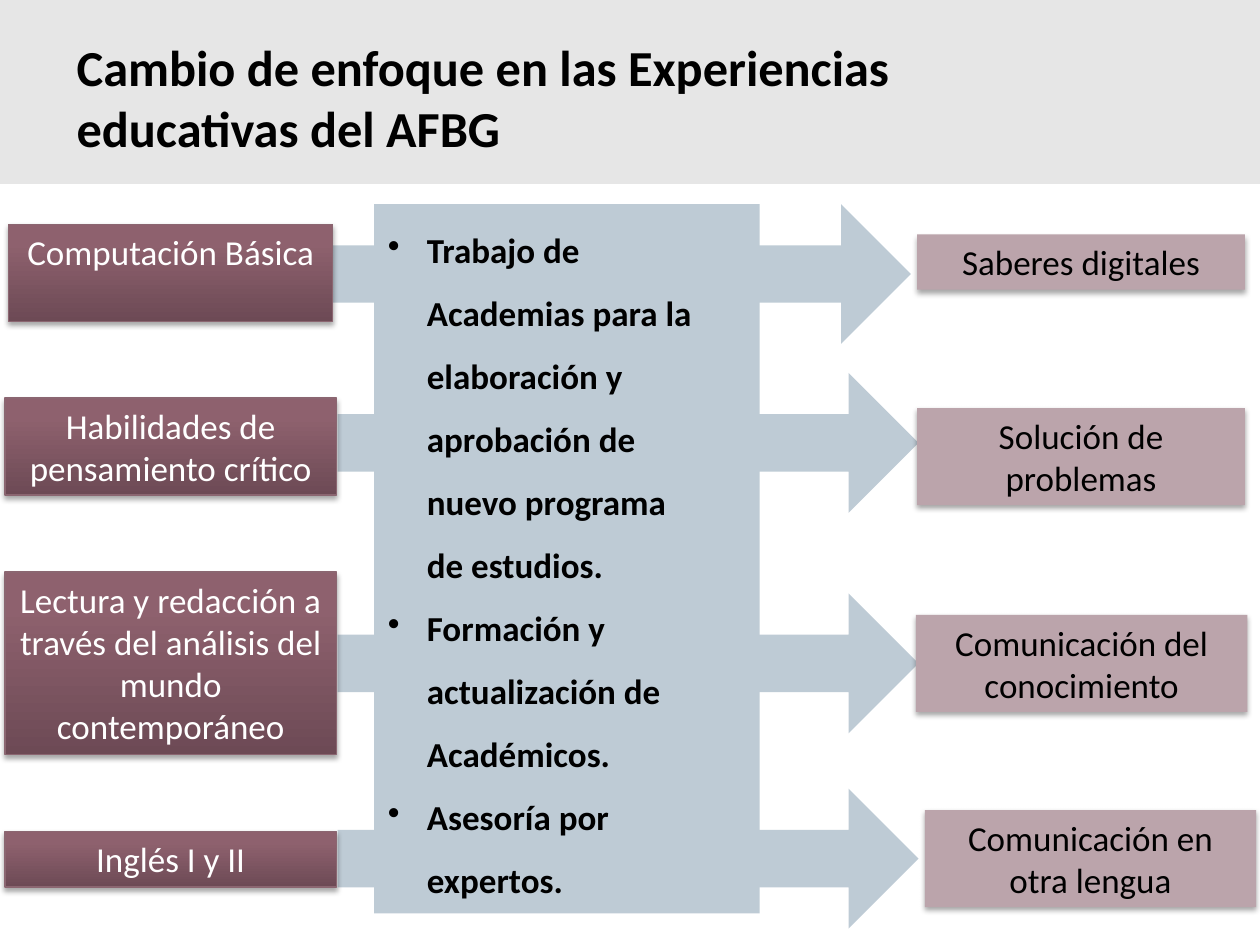
from typing import NamedTuple

from lxml import etree
from pptx import Presentation
from pptx.dml.color import RGBColor
from pptx.enum.shapes import MSO_SHAPE
from pptx.enum.text import MSO_ANCHOR, PP_ALIGN
from pptx.oxml import parse_xml
from pptx.oxml.ns import nsdecls, qn
from pptx.util import Inches, Pt

RECT, ARROW = MSO_SHAPE.RECTANGLE, MSO_SHAPE.RIGHT_ARROW
LEFT, CENTER = PP_ALIGN.LEFT, PP_ALIGN.CENTER
TOP, MIDDLE = MSO_ANCHOR.TOP, MSO_ANCHOR.MIDDLE

BLACK = RGBColor(0x00, 0x00, 0x00)
WHITE = RGBColor(0xFF, 0xFF, 0xFF)
GREY = RGBColor(0xE6, 0xE6, 0xE6)
BLUE = RGBColor(0xBE, 0xCB, 0xD5)
ROSE = RGBColor(0xBB, 0xA4, 0xAB)
EDGE = RGBColor(0x8B, 0x66, 0x71)
WINE = ((0, RGBColor(0x6D, 0x4A, 0x55)),
        (80, RGBColor(0x8E, 0x61, 0x6E)),
        (100, RGBColor(0x8F, 0x60, 0x6F)))

FONT = "Calibri"
CELL = Inches(0.1)  # the slide is a grid of 100 columns by 75 rows
COLS, ROWS = 100, 75
ARROW_H = 11.1


class Area(NamedTuple):
    col: float
    row: float
    wide: float
    high: float

    def emu(self) -> list[int]:
        return [round(n * CELL) for n in self]


class Change(NamedTuple):
    old: str
    old_at: Area
    new: str
    new_at: Area
    arrow: Area


CHANGES = [
    Change("Computación Básica", Area(0.7, 17.8, 25.7, 7.7),
           "Saberes digitales", Area(72.8, 18.6, 26, 4.4),
           Area(20.1, 16.2, 52.2, ARROW_H)),
    Change("Habilidades de pensamiento crítico", Area(0.4, 31.6, 26.3, 7.7),
           "Solución de problemas", Area(72.8, 32.4, 26, 7.7),
           Area(26.8, 29.6, 46.1, ARROW_H)),
    Change("Lectura y redacción a través del análisis del mundo contemporáneo",
           Area(0.4, 45.4, 26.3, 14.5),
           "Comunicación del conocimiento", Area(72.7, 48.8, 26.3, 7.7),
           Area(26.8, 47.1, 46.1, ARROW_H)),
    Change("Inglés I y II", Area(0.4, 66, 26.3, 4.4),
           "Comunicación en otra lengua", Area(73.4, 64.3, 26.3, 7.7),
           Area(26.8, 62.6, 46.1, ARROW_H)),
]
TASKS = [
    "Trabajo de Academias para la elaboración y aprobación de nuevo programa de estudios.",
    "Formación y actualización de Académicos.",
    "Asesoría por expertos.",
]


def write(shape, *lines: str, size: float = 20, color: RGBColor = BLACK,
          bold: bool = False, align=LEFT, anchor=TOP,
          space: float = 1, bullet: str = "") -> None:
    frame = shape.text_frame
    frame.word_wrap = True
    frame.vertical_anchor = anchor
    for i, line in enumerate(lines):
        para = frame.add_paragraph() if i else frame.paragraphs[0]
        para.alignment, para.line_spacing = align, space
        if bullet:
            props = para._p.get_or_add_pPr()
            props.set("marL", str(Inches(0.31)))
            props.set("indent", str(-Inches(0.31)))
            etree.SubElement(props, qn("a:buChar")).set("char", bullet)
        run = para.add_run()
        run.text = line
        font = run.font
        font.name, font.size, font.bold = FONT, Pt(size), bold
        font.color.rgb = color


def block(slide, area: Area, fill: RGBColor | None, kind=RECT):
    shape = slide.shapes.add_shape(kind, *area.emu())
    if fill is not None:
        shape.fill.solid()
        shape.fill.fore_color.rgb = fill
    shape.line.fill.background()
    shape.shadow.inherit = False
    return shape


def shade(shape) -> None:
    """Fill with the wine gradient, dark at the foot, and outline."""
    stops = "".join(
        f'<a:gs pos="{pos * 1000}"><a:srgbClr val="{color}"/></a:gs>'
        for pos, color in WINE)
    grad = parse_xml(
        f'<a:gradFill {nsdecls("a")} rotWithShape="1"><a:gsLst>{stops}</a:gsLst>'
        '<a:lin ang="16200000" scaled="0"/></a:gradFill>')
    shape._element.spPr.find(qn("a:prstGeom")).addnext(grad)
    shape.line.color.rgb = EDGE
    shape.line.width = Pt(0.75)


def label(slide, area: Area, text: str, fill: RGBColor | None,
          color: RGBColor) -> None:
    shape = block(slide, area, fill)
    if fill is None:
        shade(shape)
    shape._element.spPr.find(qn("a:effectLst")).append(parse_xml(
        f'<a:outerShdw {nsdecls("a")} blurRad="{Pt(3.1)}" dist="{Pt(1.8)}" '
        'dir="5400000" rotWithShape="0"><a:srgbClr val="000000">'
        '<a:alpha val="35000"/></a:srgbClr></a:outerShdw>'))
    write(shape, text, color=color, align=CENTER)


def main() -> None:
    deck = Presentation()
    deck.slide_width, deck.slide_height = COLS * CELL, ROWS * CELL
    slide = deck.slides.add_slide(deck.slide_layouts[6])

    # Header band and title
    block(slide, Area(0, 0, COLS, 14.6), GREY)
    title = slide.shapes.add_textbox(*Area(5.1, 2, 77.3, 11.4).emu())
    write(title, "Cambio de enfoque en las Experiencias educativas del AFBG",
          size=28.8, bold=True, anchor=MIDDLE)

    # Arrows behind the central panel
    for change in reversed(CHANGES):
        arrow = block(slide, change.arrow, BLUE, ARROW)
        arrow.adjustments[0], arrow.adjustments[1] = 0.41, 0.5
    block(slide, Area(29.7, 16.2, 30.6, 56.3), BLUE)

    # Old courses on the left, new ones on the right
    for change in CHANGES:
        label(slide, change.old_at, change.old, None, WHITE)
        label(slide, change.new_at, change.new, ROSE, BLACK)

    # Steps of the change
    steps = slide.shapes.add_textbox(*Area(29.8, 16, 26.3, 56.5).emu())
    write(steps, *TASKS, bold=True, space=1.5, bullet="•")

    deck.save("out.pptx")


if __name__ == "__main__":
    main()
